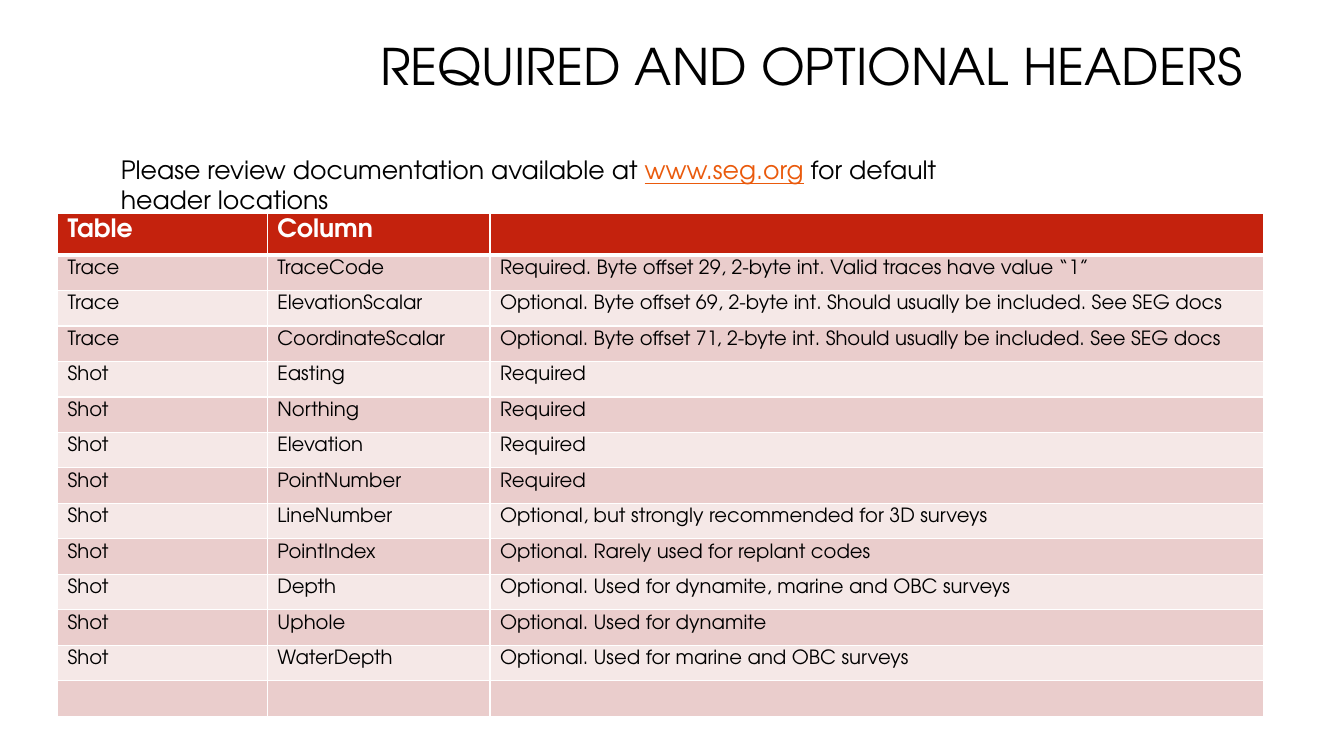
"""Build the slide listing required and optional headers."""
from lxml import etree
from pptx import Presentation
from pptx.dml.color import RGBColor
from pptx.enum.text import MSO_ANCHOR, PP_ALIGN
from pptx.oxml.ns import qn
from pptx.util import Inches, Pt

TITLE = "REQUIRED AND OPTIONAL HEADERS"
ADVICE = ("Please review documentation available at ", "www.seg.org",
          " for default header locations")
HEADERS = [
    ("Table", "Column", ""),
    ("Trace", "TraceCode", "Required. Byte offset 29, 2-byte int. Valid traces have value “1”"),
    ("Trace", "ElevationScalar",
     "Optional. Byte offset 69, 2-byte int. Should usually be included. See SEG docs"),
    ("Trace", "CoordinateScalar",
     "Optional. Byte offset 71, 2-byte int. Should usually be included. See SEG docs"),
    ("Shot", "Easting", "Required"),
    ("Shot", "Northing", "Required"),
    ("Shot", "Elevation", "Required"),
    ("Shot", "PointNumber", "Required"),
    ("Shot", "LineNumber", "Optional, but strongly recommended for 3D surveys"),
    ("Shot", "PointIndex", "Optional. Rarely used for replant codes"),
    ("Shot", "Depth", "Optional. Used for dynamite, marine and OBC surveys"),
    ("Shot", "Uphole", "Optional. Used for dynamite"),
    ("Shot", "WaterDepth", "Optional. Used for marine and OBC surveys"),
    ("", "", ""),
]
COLUMN_WIDTHS = (2.08, 2.21, 7.67)
TABLE_HEIGHT = 4.99
HEADING_HEIGHT = 0.41
CELL_MARGIN = 0.05

FONT = "TeX Gyre Adventor"
BLACK = RGBColor(0x00, 0x00, 0x00)
WHITE = RGBColor(0xFF, 0xFF, 0xFF)
RED = RGBColor(0xC4, 0x22, 0x0D)
ORANGE = RGBColor(0xEA, 0x5A, 0x0C)
BANDS = (RGBColor(0xF5, 0xE8, 0xE7), RGBColor(0xEA, 0xCD, 0xCC))
RIGHT = PP_ALIGN.RIGHT
TOP = MSO_ANCHOR.TOP
MIDDLE = MSO_ANCHOR.MIDDLE


def add_text(paragraph, text, size=18, color=BLACK, bold=False, underline=False):
    run = paragraph.add_run()
    run.text = text
    font = run.font
    font.name, font.size, font.bold, font.underline = FONT, Pt(size), bold, underline
    font.color.rgb = color


def add_box(slide, left, top, width, height, anchor=TOP):
    box = slide.shapes.add_textbox(Inches(left), Inches(top), Inches(width), Inches(height))
    box.text_frame.word_wrap = True
    box.text_frame.vertical_anchor = anchor
    return box.text_frame.paragraphs[0]


def set_borders(cell, **widths):
    properties = cell._tc.get_or_add_tcPr()
    for position, (side, width) in enumerate(widths.items()):
        line = etree.Element(qn(f"a:ln{side}"), w=str(Pt(width)))
        fill = etree.SubElement(line, qn("a:solidFill"))
        etree.SubElement(fill, qn("a:srgbClr"), val=str(WHITE))
        properties.insert(position, line)


def add_headers(slide):
    table = slide.shapes.add_table(
        len(HEADERS), len(COLUMN_WIDTHS), Inches(0.57), Inches(2.12),
        Inches(sum(COLUMN_WIDTHS)), Inches(TABLE_HEIGHT)).table
    for column, width in zip(table.columns, COLUMN_WIDTHS):
        column.width = Inches(width)
    body_height = (TABLE_HEIGHT - HEADING_HEIGHT) / (len(HEADERS) - 1)
    for index, entries in enumerate(HEADERS):
        heading = index == 0
        table.rows[index].height = Inches(HEADING_HEIGHT if heading else body_height)
        for column, entry in enumerate(entries):
            cell = table.cell(index, column)
            cell.margin_top = cell.margin_bottom = Inches(CELL_MARGIN if entry else 0)
            cell.fill.solid()
            cell.fill.fore_color.rgb = RED if heading else BANDS[index % 2]
            set_borders(cell, L=1, R=1, T=3 if index == 1 else 1, B=3 if heading else 1)
            if entry:
                add_text(cell.text_frame.paragraphs[0], entry, size=18 if heading else 14,
                         color=WHITE if heading else BLACK, bold=heading)


def main():
    deck = Presentation()
    deck.slide_width, deck.slide_height = Inches(13.33), Inches(7.5)
    slide = deck.slides.add_slide(deck.slide_layouts[6])
    title = add_box(slide, 0.92, 0.4, 11.5, 0.58, anchor=MIDDLE)
    title.alignment, title.line_spacing = RIGHT, 0.9
    add_text(title, TITLE, size=36)
    add_headers(slide)
    advice = add_box(slide, 1.1, 1.48, 9, 0.4)
    before, site, after = ADVICE
    add_text(advice, before)
    add_text(advice, site, color=ORANGE, underline=True)
    add_text(advice, after)
    deck.save("out.pptx")


if __name__ == "__main__":
    main()
